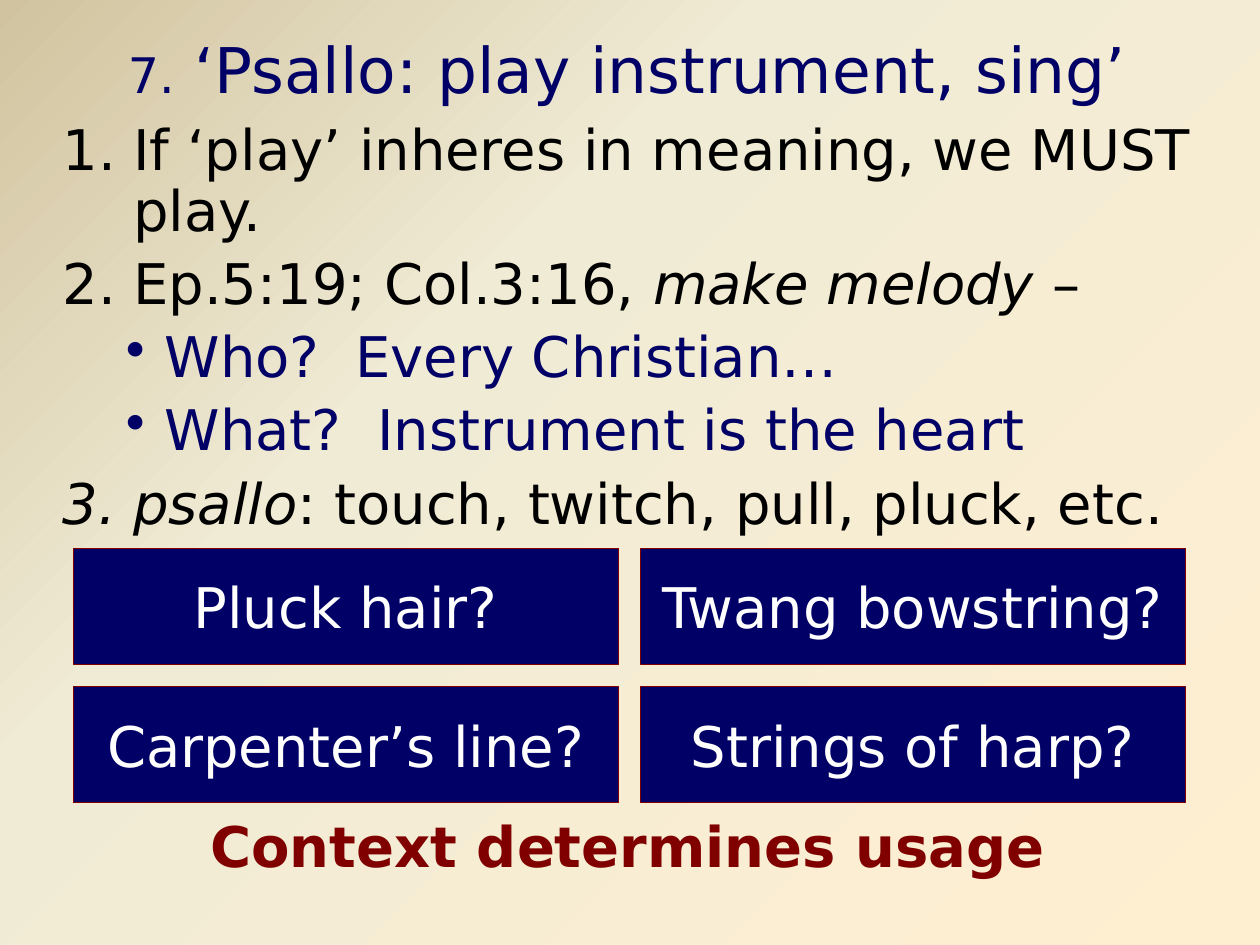
from dataclasses import dataclass
from typing import Any

from lxml import etree
from pptx import Presentation
from pptx.dml.color import RGBColor
from pptx.enum.shapes import MSO_SHAPE
from pptx.enum.text import MSO_ANCHOR, PP_ALIGN
from pptx.oxml.ns import qn
from pptx.util import Inches, Pt

RECT = MSO_SHAPE.RECTANGLE
CENTER, LEFT = PP_ALIGN.CENTER, PP_ALIGN.LEFT
MIDDLE, TOP = MSO_ANCHOR.MIDDLE, MSO_ANCHOR.TOP
FONT = "DejaVu Sans"
NAVY, MAROON, BLACK, WHITE = "000066", "800000", "000000", "FFFFFF"
STOPS = [(0, "D1C39F"), (35, "F0EBD5"), (100, "FFEFD1")]


@dataclass
class Span:
    text: str
    size: float = 32
    italic: bool = False


@dataclass
class Point:
    spans: list[Span]
    level: int = 0


POINTS = [
    Point([Span("If ‘play’ inheres in meaning, we MUST play.")]),
    Point([Span("Ep.5:19; Col.3:16, "), Span("make melody", italic=True),
           Span(" –")]),
    Point([Span("Who?  Every Christian…")], 1),
    Point([Span("What?  Instrument is the heart")], 1),
    Point([Span("psallo", italic=True),
           Span(": touch, twitch, pull, pluck, etc.")]),
]
USES = ["Pluck hair?", "Twang bowstring?",
        "Carpenter’s line?", "Strings of harp?"]


def color(code: str) -> RGBColor:
    return RGBColor.from_string(code)


def write(para: Any, spans: list[Span], *, tint: str, bold: bool = False,
          align: PP_ALIGN = CENTER) -> None:
    """Fill a paragraph with styled runs."""
    para.alignment = align
    for span in spans:
        run = para.add_run()
        run.text = span.text
        font = run.font
        font.name, font.size = FONT, Pt(span.size)
        font.bold, font.italic = bold, span.italic
        font.color.rgb = color(tint)


def add_box(slide: Any, left: float, top: float, width: float, height: float,
            anchor: MSO_ANCHOR = MIDDLE) -> Any:
    """Add a wrapping text box and return its frame."""
    box = slide.shapes.add_textbox(
        Inches(left), Inches(top), Inches(width), Inches(height))
    frame = box.text_frame
    frame.word_wrap = True
    frame.vertical_anchor = anchor
    return frame


def add_mark(para: Any, level: int) -> None:
    """Number a top-level point, or put a dot before a nested one."""
    props = para._p.get_or_add_pPr()
    indent, hang = (0.81, 0.31) if level else (0.56, 0.56)
    props.set("marL", str(Inches(indent)))
    props.set("indent", str(-Inches(hang)))
    if level:
        etree.SubElement(props, qn("a:buChar"), char="•")
    else:
        etree.SubElement(props, qn("a:buAutoNum"), type="arabicPeriod")


def add_points(slide: Any) -> None:
    frame = add_box(slide, 0.4, 0.92, 9.17, 3.4, TOP)
    for num, point in enumerate(POINTS):
        para = frame.add_paragraph() if num else frame.paragraphs[0]
        para.level = point.level
        para.line_spacing = 0.9
        if num:
            para.space_before = Pt(7.3)
        add_mark(para, point.level)
        write(para, point.spans, tint=NAVY if point.level else BLACK,
              align=LEFT)


def add_card(slide: Any, left: float, top: float, text: str) -> None:
    card = slide.shapes.add_shape(
        RECT, Inches(left), Inches(top), Inches(4.33), Inches(0.92))
    card.shadow.inherit = False
    card.fill.solid()
    card.fill.fore_color.rgb = color(NAVY)
    card.line.color.rgb = color(MAROON)
    card.line.width = Pt(0.5)
    card.text_frame.word_wrap = True
    card.text_frame.vertical_anchor = MIDDLE
    write(card.text_frame.paragraphs[0], [Span(text)], tint=WHITE)


def paint(slide: Any) -> None:
    """Give the slide its diagonal three-stop gradient."""
    fill = slide.background.fill
    fill.gradient()
    fill.gradient_angle = 315
    stops = next(slide.element.iter(qn("a:gsLst")))
    for old in list(stops):
        stops.remove(old)
    for place, code in STOPS:
        stop = etree.SubElement(stops, qn("a:gs"), pos=str(place * 1000))
        etree.SubElement(stop, qn("a:srgbClr"), val=code)


def main() -> None:
    deck = Presentation()
    deck.slide_width, deck.slide_height = Inches(10), Inches(7.5)
    slide = deck.slides.add_slide(deck.slide_layouts[6])
    paint(slide)
    title = add_box(slide, 0.48, 0.08, 9, 0.92)
    write(title.paragraphs[0],
          [Span("7.", 28), Span(" ‘Psallo: play instrument, sing’", 36)],
          tint=NAVY)
    add_points(slide)
    for num, text in enumerate(USES):
        row, col = divmod(num, 2)
        add_card(slide, 0.58 + 4.5 * col, 4.35 + 1.1 * row, text)
    close = add_box(slide, 0.4, 6.4, 9.17, 0.62)
    write(close.paragraphs[0], [Span("Context determines usage")],
          tint=MAROON, bold=True)
    deck.save("out.pptx")


if __name__ == "__main__":
    main()
